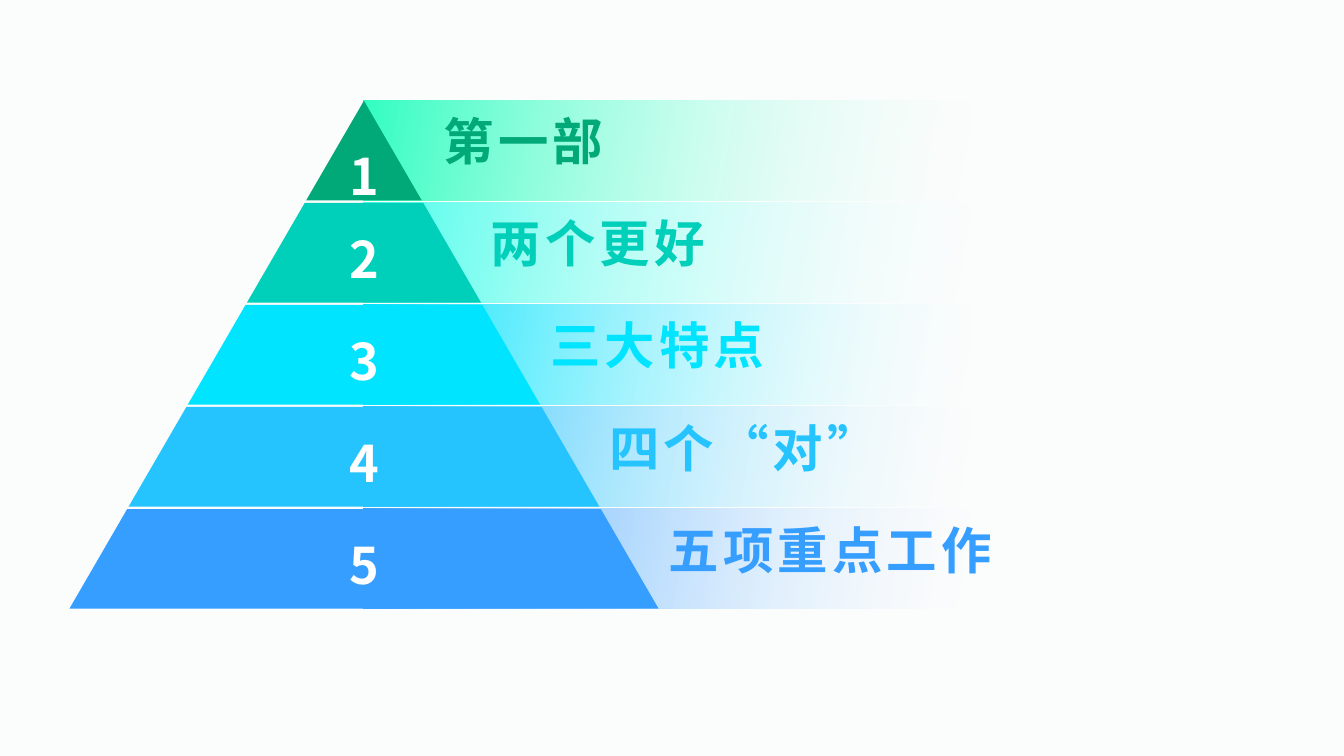
from dataclasses import dataclass

from lxml.etree import SubElement
from pptx import Presentation
from pptx.dml.color import RGBColor as Rgb
from pptx.enum.shapes import MSO_SHAPE as Preset
from pptx.enum.text import MSO_ANCHOR as Anchor, PP_ALIGN as Align
from pptx.oxml.ns import qn
from pptx.slide import Slide
from pptx.util import Pt


@dataclass(frozen=True)
class Theme:
    background: str = "FBFCFC"
    white: str = "FFFFFF"
    font: str = "Noto Sans CJK SC"
    size: float = 36
    tracking: float = 3
    line_spacing: float = 1.2
    fade_opacity: int = 17
    fade_angle: float = 350


@dataclass(frozen=True)
class Level:
    label: str
    color: str
    glow: str
    label_shift: float = 0
    number_width: float = 168
    number_height: float = 50.4
    number_middle: float = 35.4


THEME = Theme()
LEVELS = [
    Level("第一部", "00A977", "32FFC2", 8.6, 65, 34.6, 49),
    Level("两个更好", "00CFB9", "49FFEC", number_width=114.5),
    Level("三大特点", "00E4FF", "00E4FF"),
    Level("四个“对”", "25C4FF", "25C4FF"),
    Level("五项重点工作", "359EFF", "359EFF"),
]

APEX_X, APEX_Y = 260, 72
PITCH, TIER_HEIGHT = 72.9, 71.2
SLOPE = 0.58
BAND_WIDTH = 432.7
LABEL_DROP, LABEL_WIDTH, LABEL_HEIGHT = 20.6, 306.7, 29.5


def level_top(index: int) -> float:
    return APEX_Y + index * PITCH


def half_width(y: float) -> float:
    """Half the width of the pyramid at height y."""
    return SLOPE * (y - APEX_Y)


def add_text(page: Slide, text: str, *, left: float, top: float, width: float,
             height: float, color: str, align: Align = Align.LEFT,
             anchor: Anchor = Anchor.MIDDLE, bottom_inset: float = 3.6) -> None:
    box = page.shapes.add_textbox(Pt(left), Pt(top), Pt(width), Pt(height))
    frame = box.text_frame
    frame.word_wrap = True
    frame.vertical_anchor = anchor
    frame.margin_bottom = Pt(bottom_inset)
    para = frame.paragraphs[0]
    para.alignment = align
    para.line_spacing = THEME.line_spacing
    span = para.add_run()
    span.text = text
    span.font.name = THEME.font
    span.font.size = Pt(THEME.size)
    span.font.bold = True
    span.font.color.rgb = Rgb.from_string(color)
    properties = span.font._element
    properties.set("spc", str(int(THEME.tracking * 100)))
    SubElement(properties, qn("a:ea"), typeface=THEME.font)


def add_band(page: Slide, index: int, level: Level) -> None:
    """Draw the bar that fades out to the right behind a tier."""
    band = page.shapes.add_shape(Preset.RECTANGLE, Pt(APEX_X), Pt(level_top(index)),
                                 Pt(BAND_WIDTH), Pt(TIER_HEIGHT))
    band.shadow.inherit = False
    band.line.fill.background()
    band.fill.gradient()
    band.fill.gradient_angle = THEME.fade_angle
    for stop, color in zip(band.fill.gradient_stops, (level.glow, THEME.white)):
        stop.color.rgb = Rgb.from_string(color)
    last_color = list(band._element.spPr.iter(qn("a:srgbClr")))[-1]
    SubElement(last_color, qn("a:alpha"), val=str(THEME.fade_opacity * 1000))


def add_label(page: Slide, index: int, level: Level) -> None:
    top = level_top(index)
    foot = APEX_X + half_width(top + TIER_HEIGHT)
    add_text(page, level.label, left=foot + level.label_shift, top=top + LABEL_DROP,
             width=LABEL_WIDTH, height=LABEL_HEIGHT, color=level.color,
             anchor=Anchor.BOTTOM, bottom_inset=0)


def add_tier(page: Slide, index: int, level: Level) -> None:
    top = level_top(index)
    bottom = top + TIER_HEIGHT
    upper, lower = half_width(top), half_width(bottom)
    corners = [(APEX_X - upper, top), (APEX_X + upper, top),
               (APEX_X + lower, bottom), (APEX_X - lower, bottom)]
    # The top tier is a triangle: its two upper corners coincide.
    start, *others = [(Pt(x), Pt(y)) for x, y in dict.fromkeys(corners)]
    builder = page.shapes.build_freeform(*start)
    builder.add_line_segments(others, close=True)
    tier = builder.convert_to_shape()
    tier.shadow.inherit = False
    tier.line.fill.background()
    tier.fill.solid()
    tier.fill.fore_color.rgb = Rgb.from_string(level.color)


def add_number(page: Slide, index: int, level: Level) -> None:
    middle = level_top(index) + level.number_middle
    add_text(page, str(index + 1), left=APEX_X - level.number_width / 2,
             top=middle - level.number_height / 2, width=level.number_width,
             height=level.number_height, color=THEME.white, align=Align.CENTER)


def main() -> None:
    deck = Presentation()
    deck.slide_width, deck.slide_height = Pt(960), Pt(540)
    page = deck.slides.add_slide(deck.slide_layouts[6])
    page.background.fill.solid()
    page.background.fill.fore_color.rgb = Rgb.from_string(THEME.background)
    for draw in (add_band, add_label, add_tier, add_number):
        for index, level in enumerate(LEVELS):
            draw(page, index, level)
    deck.save("out.pptx")


if __name__ == "__main__":
    main()
